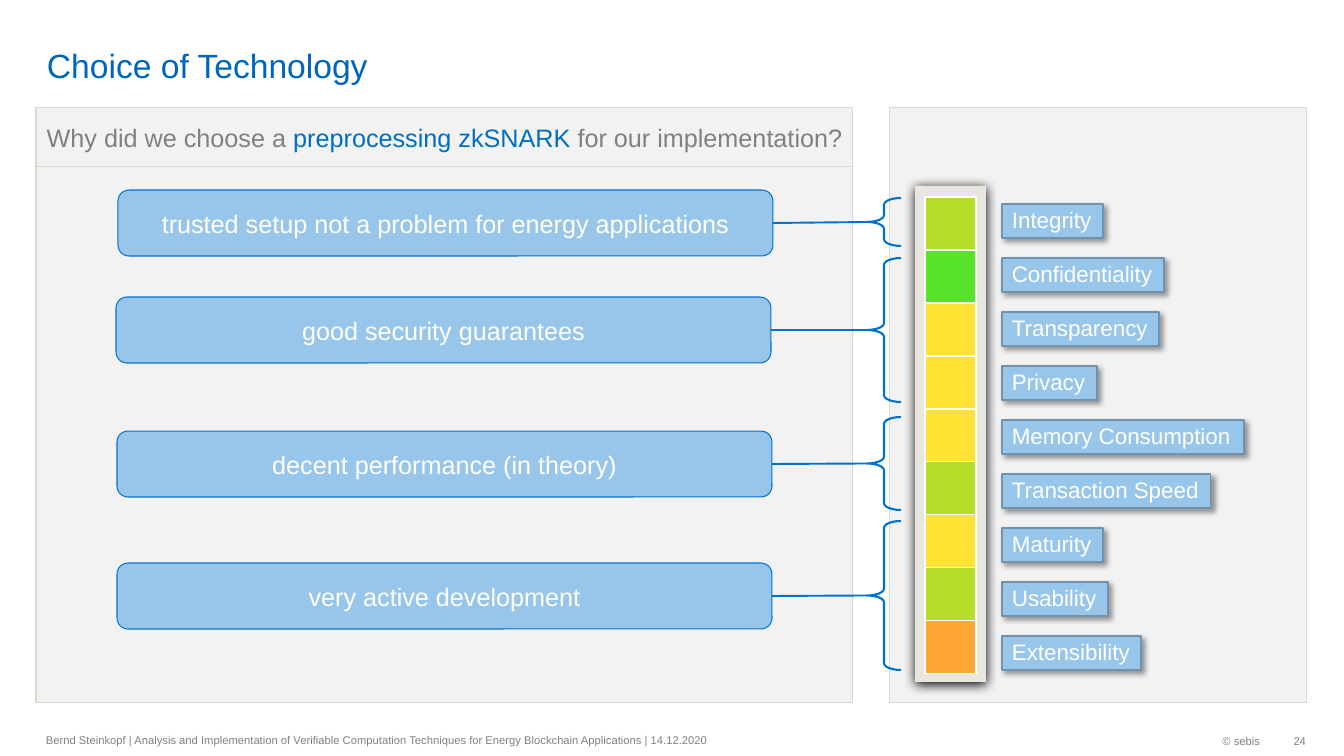
import pptx
import pptx.util
import pptx.dml.color
import pptx.enum.shapes
import pptx.enum.text
import pptx.oxml
import pptx.oxml.ns

PX = 914400 / 100.8
SHAPE = pptx.enum.shapes.MSO_SHAPE
ALIGN = pptx.enum.text.PP_ALIGN
ANCHOR = pptx.enum.text.MSO_ANCHOR
NS = pptx.oxml.ns.nsdecls("a")
HUES = {
    "panel": "F2F2F2", "edge": "DAD7CB", "grey": "808080", "title": "0065BD",
    "mark": "006FC2", "frame": "E8E6DF", "sky": "98C6EA", "rim": "7092AD",
    "blue": "0073CF", "white": "FFFFFF", "black": "000000",
    "lime": "B7DD29", "green": "57E32C", "yellow": "FFE234", "orange": "FFA534",
}


def rgb(name):
    return pptx.dml.color.RGBColor.from_string(HUES[name])


def add_box(kind, area, fill=None, line=None, width=0.75, text="", size=18,
            hue="white", align=ALIGN.CENTER, anchor=ANCHOR.MIDDLE, wrap=True):
    """Add a preset shape, or a text box when kind is None; area is in px."""
    place = [round(n * PX) for n in area]
    if kind is None:
        box = slide.shapes.add_textbox(*place)
    else:
        box = slide.shapes.add_shape(kind, *place)
        box.shadow.inherit = False
        if fill:
            box.fill.solid()
            box.fill.fore_color.rgb = rgb(fill)
        else:
            box.fill.background()
        if line:
            box.line.color.rgb = rgb(line)
            box.line.width = pptx.util.Pt(width)
        else:
            box.line.fill.background()
    if text:
        frame = box.text_frame
        frame.text = text
        frame.word_wrap = wrap
        frame.vertical_anchor = anchor
        para = frame.paragraphs[0]
        para.alignment = align
        para.font.name = "Arial"
        para.font.size = pptx.util.Pt(size)
        para.font.color.rgb = rgb(hue)
    return box


def add_shadow(box, blur, dist, angle, alpha):
    """Give a box an outer shadow; blur and dist in points, alpha in percent."""
    glow = box.element.spPr.find(pptx.oxml.ns.qn("a:effectLst"))
    glow.append(pptx.oxml.parse_xml(
        f'<a:outerShdw {NS} blurRad="{round(blur * 12700)}" dist="{dist * 12700}" '
        f'dir="{angle * 60000}" algn="ctr" rotWithShape="0">'
        f'<a:srgbClr val="{HUES["black"]}"><a:alpha val="{alpha * 1000}"/>'
        '</a:srgbClr></a:outerShdw>'))


deck = pptx.Presentation()
deck.slide_width = round(1344 * PX)
deck.slide_height = round(756 * PX)
slide = deck.slides.add_slide(deck.slide_layouts[6])

# Panels and heading
add_box(SHAPE.RECTANGLE, (36, 167, 817, 536), "panel", "edge")
add_box(SHAPE.RECTANGLE, (890, 108, 417, 595), "panel", "edge")
head = add_box(SHAPE.RECTANGLE, (36, 108, 817, 59), "panel", "edge",
               text="Why did we choose a ", hue="grey", wrap=False)
para = head.text_frame.paragraphs[0]
for words, hue in (("preprocessing zkSNARK ", "mark"),
                   ("for our implementation?", "grey")):
    run = para.add_run()
    run.text = words
    run.font.color.rgb = rgb(hue)

title = add_box(None, (37, 5, 1167, 80), text="Choice of Technology", size=24,
                hue="title", align=ALIGN.LEFT, anchor=ANCHOR.BOTTOM)
title.text_frame.margin_top = title.text_frame.margin_bottom = 0

# Footer
add_box(None, (1034, 725, 236, 32), text="© sebis", size=8, hue="grey",
        align=ALIGN.RIGHT)
add_box(None, (36, 724, 703, 32), size=8, hue="grey", align=ALIGN.LEFT,
        text="Bernd Steinkopf | Analysis and Implementation of Verifiable Computation "
             "Techniques for Energy Blockchain Applications | 14.12.2020")
page = add_box(None, (1270, 725, 36, 32), text="24", size=8, hue="grey",
               align=ALIGN.RIGHT)
page.text_frame.margin_right = 0

# Rating column with its labels
ratings = [
    ("Integrity", 101, "lime"), ("Confidentiality", 162, "green"),
    ("Transparency", 157, "yellow"), ("Privacy", 95, "yellow"),
    ("Memory Consumption", 242, "yellow"), ("Transaction Speed", 209, "lime"),
    ("Maturity", 101, "yellow"), ("Usability", 106, "lime"),
    ("Extensibility", 139, "orange"),
]
frame = add_box(SHAPE.RECTANGLE, (915, 186, 71, 496), "frame")
add_shadow(frame, 8.5, 1, 90, 100)
place = [round(n * PX) for n in (925, 197, 51, 477)]
grid = slide.shapes.add_table(len(ratings), 1, *place).table
grid.first_row = grid.horz_banding = False
for i, (label, width, hue) in enumerate(ratings):
    grid.rows[i].height = round(53 * PX)
    cell = grid.cell(i, 0)
    props = cell._tc.get_or_add_tcPr()
    for side in ("lnL", "lnR", "lnT", "lnB"):
        props.append(pptx.oxml.parse_xml(
            f'<a:{side} {NS} w="12700"><a:solidFill>'
            f'<a:srgbClr val="{HUES["white"]}"/></a:solidFill></a:{side}>'))
    cell.fill.solid()
    cell.fill.fore_color.rgb = rgb(hue)

    tag = add_box(SHAPE.RECTANGLE, (1002, 204 + 54 * i, width, 34), "sky", "rim",
                  0.85, label, 16, align=ALIGN.LEFT, anchor=ANCHOR.TOP, wrap=False)
    tag.text_frame.paragraphs[0].line_spacing = 0.9
    add_shadow(tag, 4, 3, 45, 40)

# Reasons, each tied to its ratings by a brace
reasons = [
    ("trusted setup not a problem for energy applications", 118, 190, 198, 48),
    ("good security guarantees", 116, 297, 258, 144),
    ("decent performance (in theory)", 117, 431, 417, 93),
    ("very active development", 117, 563, 521, 149),
]
for text, left, top, start, height in reasons:
    brace = add_box(SHAPE.LEFT_BRACE, (867, start, 34, height), line="blue", width=1.5)
    brace.adjustments[0] = 0.2
    brace.adjustments[1] = 0.5
    add_box(SHAPE.ROUNDED_RECTANGLE, (left, top, 655, 66), "sky", "blue", text=text)
    ends = [round(n * PX) for n in (left + 655, top + 33, 867, start + height / 2)]
    link = slide.shapes.add_connector(pptx.enum.shapes.MSO_CONNECTOR.STRAIGHT, *ends)
    link.line.color.rgb = rgb("blue")
    link.line.width = pptx.util.Pt(1.35)
    link.element.spPr.append(pptx.oxml.parse_xml(f"<a:effectLst {NS}/>"))

deck.save("out.pptx")
